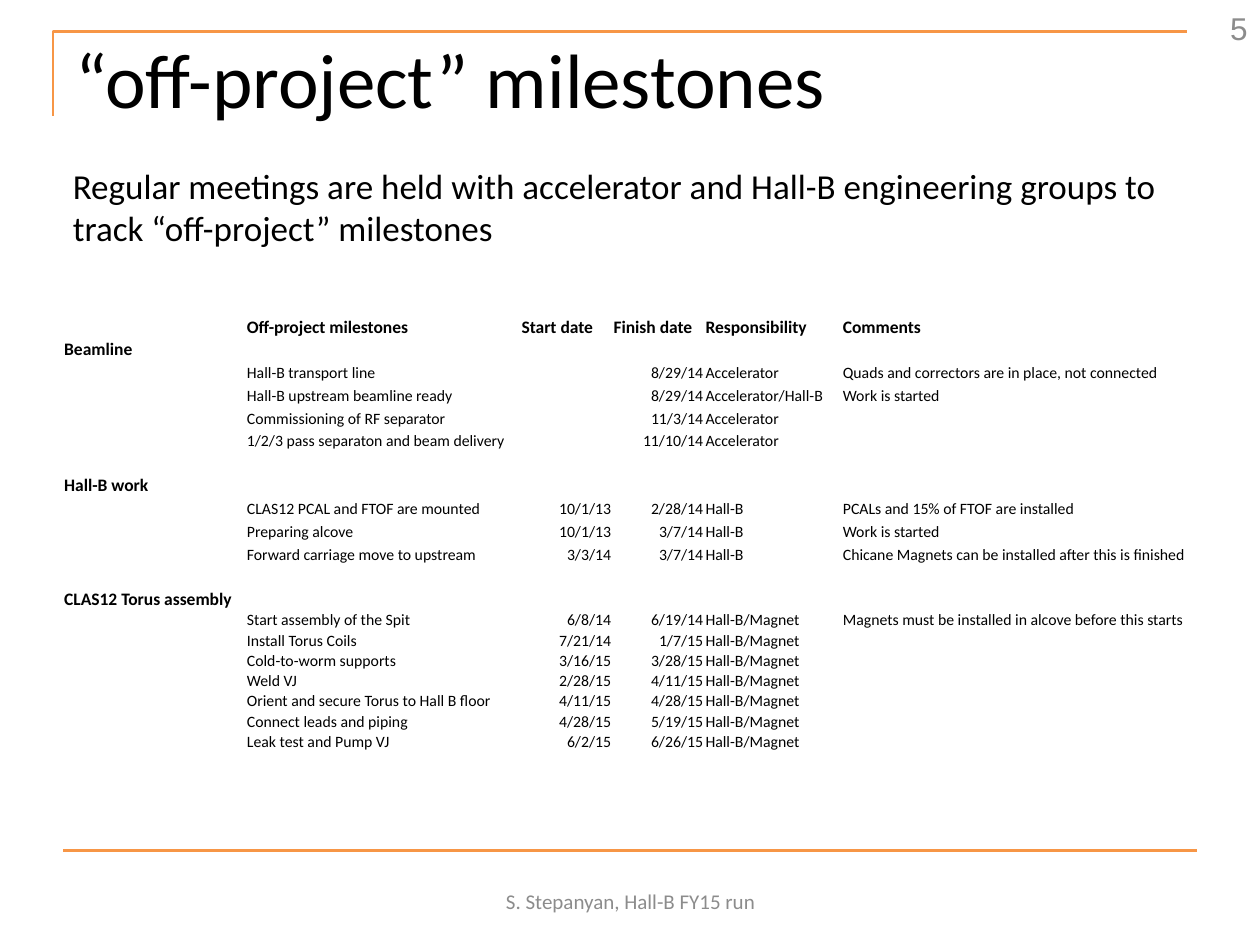
from lxml import etree
from pptx import Presentation
from pptx.dml.color import RGBColor
from pptx.enum.shapes import MSO_CONNECTOR
from pptx.enum.text import MSO_ANCHOR, PP_ALIGN
from pptx.oxml.ns import qn
from pptx.util import Inches, Pt

LEFT, CENTER, RIGHT = PP_ALIGN.LEFT, PP_ALIGN.CENTER, PP_ALIGN.RIGHT
TOP, MIDDLE, BOTTOM = MSO_ANCHOR.TOP, MSO_ANCHOR.MIDDLE, MSO_ANCHOR.BOTTOM
STRAIGHT = MSO_CONNECTOR.STRAIGHT

COLORS = {"accent": "F79646", "text": "000000", "muted": "8C8C8C"}

COLUMN_WIDTHS = [1.45, 2.18, 0.73, 0.73, 1.09, 2.83]
TALL_ROW, SHORT_ROW = 0.18, 0.16
DATE_COLUMNS = (2, 3)
HEADER = ["", "Off-project milestones", "Start date", "Finish date", "Responsibility", "Comments"]
SECTIONS = [
    ("Beamline", TALL_ROW, [
        ("Hall-B transport line", "", "8/29/14", "Accelerator",
         "Quads and correctors are in place, not connected"),
        ("Hall-B upstream beamline ready", "", "8/29/14", "Accelerator/Hall-B", "Work is started"),
        ("Commissioning of RF separator", "", "11/3/14", "Accelerator", ""),
        ("1/2/3 pass separaton and beam delivery", "", "11/10/14", "Accelerator", ""),
    ]),
    ("Hall-B work", TALL_ROW, [
        ("CLAS12 PCAL and FTOF are mounted", "10/1/13", "2/28/14", "Hall-B",
         "PCALs and 15% of FTOF are installed"),
        ("Preparing alcove", "10/1/13", "3/7/14", "Hall-B", "Work is started"),
        ("Forward carriage move to upstream", "3/3/14", "3/7/14", "Hall-B",
         "Chicane Magnets can be installed after this is finished"),
    ]),
    ("CLAS12 Torus assembly", SHORT_ROW, [
        ("Start assembly of the Spit", "6/8/14", "6/19/14", "Hall-B/Magnet",
         "Magnets must be installed in alcove before this starts"),
        ("Install Torus Coils", "7/21/14", "1/7/15", "Hall-B/Magnet", ""),
        ("Cold-to-worm supports", "3/16/15", "3/28/15", "Hall-B/Magnet", ""),
        ("Weld VJ", "2/28/15", "4/11/15", "Hall-B/Magnet", ""),
        ("Orient and secure Torus to Hall B floor", "4/11/15", "4/28/15", "Hall-B/Magnet", ""),
        ("Connect leads and piping", "4/28/15", "5/19/15", "Hall-B/Magnet", ""),
        ("Leak test and Pump VJ", "6/2/15", "6/26/15", "Hall-B/Magnet", ""),
    ]),
]


def milestone_rows():
    rows = [(HEADER, TALL_ROW, True)]
    for index, (section, height, milestones) in enumerate(SECTIONS):
        if index:
            rows.append(([""] * len(HEADER), TALL_ROW, False))
        rows.append(([section] + [""] * (len(HEADER) - 1), TALL_ROW, True))
        rows += [(["", *milestone], height, False) for milestone in milestones]
    return rows


class SlideBuilder:
    def __init__(self, slide, font="Calibri"):
        self.slide = slide
        self.font = font

    def color(self, name):
        return RGBColor.from_string(COLORS[name])

    def add_words(self, paragraph, text, size, color="text", align=LEFT, bold=False, font=None):
        paragraph.alignment = align
        run = paragraph.add_run()
        run.text = text
        formats = {"size": Pt(size), "name": font or self.font, "bold": bold}
        for name, value in formats.items():
            setattr(run.font, name, value)
        run.font.color.rgb = self.color(color)

    def fill_frame(self, shape, text, size, anchor, **style):
        shape.text_frame.word_wrap = True
        shape.text_frame.vertical_anchor = anchor
        self.add_words(shape.text_frame.paragraphs[0], text, size, **style)

    def title(self, text, left, top, width, height, size):
        title = self.slide.shapes.title
        bounds = {"left": left, "top": top, "width": width, "height": height}
        for name, value in bounds.items():
            setattr(title, name, Inches(value))
        self.fill_frame(title, text, size, MIDDLE)

    def text(self, text, left, top, width, height, size, anchor=MIDDLE, **style):
        box = self.slide.shapes.add_textbox(*map(Inches, (left, top, width, height)))
        self.fill_frame(box, text, size, anchor, **style)

    def outline(self, shape):
        shape.line.color.rgb = self.color("accent")
        shape.line.width = Pt(1.5)

    def corner(self, start, *points):
        builder = self.slide.shapes.build_freeform(*map(Inches, start))
        builder.add_line_segments([tuple(map(Inches, point)) for point in points], close=False)
        shape = builder.convert_to_shape()
        shape.shadow.inherit = False
        shape.fill.background()
        self.outline(shape)

    def rule(self, left, top, right):
        connector = self.slide.shapes.add_connector(
            STRAIGHT, *map(Inches, (left, top, right, top)))
        self.outline(connector)
        etree.SubElement(connector.element.spPr, qn("a:effectLst"))

    def cell(self, cell, text, size, **style):
        formats = {"margin_left": 0.01, "margin_right": 0.01, "margin_top": 0.01, "margin_bottom": 0}
        for name, value in formats.items():
            setattr(cell, name, Inches(value))
        cell.vertical_anchor = BOTTOM
        cell.fill.background()
        paragraph = cell.text_frame.paragraphs[0]
        if text:
            self.add_words(paragraph, text, size, **style)
        else:
            etree.SubElement(paragraph._p, qn("a:endParaRPr"), sz=str(size * 100))

    def table(self, rows, left, top):
        width = sum(COLUMN_WIDTHS)
        height = sum(row_height for _, row_height, _ in rows)
        frame = self.slide.shapes.add_table(
            len(rows), len(COLUMN_WIDTHS), *map(Inches, (left, top, width, height)))
        table = frame.table
        table.first_row = table.horz_banding = False
        for column, column_width in zip(table.columns, COLUMN_WIDTHS):
            column.width = Inches(column_width)
        for row, (texts, row_height, bold) in zip(table.rows, rows):
            row.height = Inches(row_height)
            for index, (cell, text) in enumerate(zip(row.cells, texts)):
                align = RIGHT if index in DATE_COLUMNS and not bold else LEFT
                self.cell(cell, text, 10 if bold else 9, align=align, bold=bold)


def main():
    presentation = Presentation()
    presentation.slide_width, presentation.slide_height = Inches(10), Inches(7.5)
    slide = SlideBuilder(presentation.slides.add_slide(presentation.slide_layouts[5]))
    slide.corner((0.42, 0.92), (0.42, 0.25), (9.42, 0.25))
    slide.rule(0.5, 6.75, 9.5)
    slide.title("“off-project” milestones", 0.5, 0.15, 9, 0.94, 44)
    slide.text("S. Stepanyan, Hall-B FY15 run", 3.42, 6.95, 3.17, 0.4, 12,
               color="muted", align=CENTER)
    slide.text("5", 7.67, 0.02, 2.33, 0.4, 18, color="muted", align=RIGHT, font="Arial")
    slide.table(milestone_rows(), 0.5, 2.5)
    slide.text("Regular meetings are held with accelerator and Hall-B engineering groups to "
               "track “off-project” milestones", 0.48, 1.26, 9, 0.77, 20, anchor=TOP)
    presentation.save("out.pptx")


if __name__ == "__main__":
    main()
